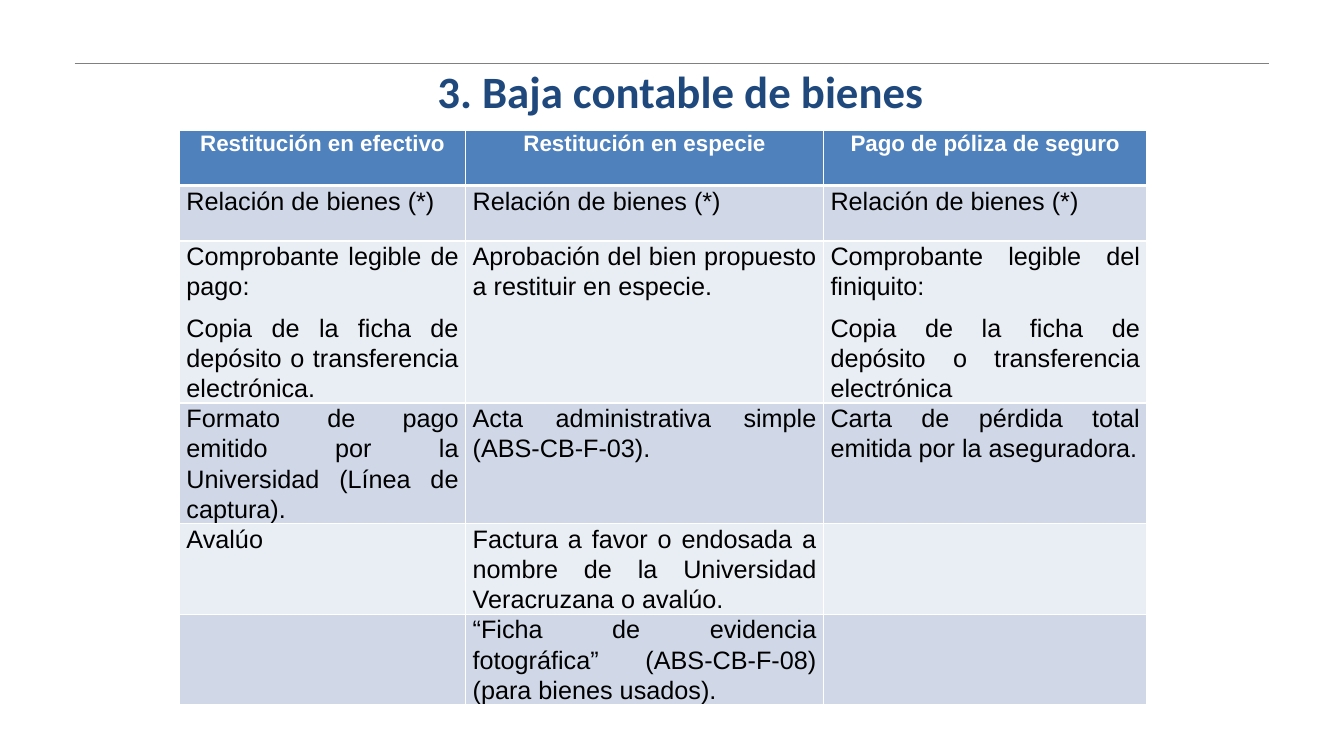
from lxml.etree import SubElement
from pptx import Presentation
from pptx.dml.color import RGBColor as Rgb
from pptx.enum.shapes import MSO_CONNECTOR as Connector
from pptx.enum.text import MSO_ANCHOR as Anchor, PP_ALIGN as Align
from pptx.oxml import parse_xml
from pptx.oxml.ns import nsdecls, qn
from pptx.util import Inches, Pt

COLORS = {
    "white": "FFFFFF", "black": "000000", "rule": "808080", "title": "1F497D",
    "header": "4F81BD", "band": "D0D8E8", "light": "E9EDF4",
}
TITLE_FONT = {"name": "Calibri", "size": Pt(32), "bold": True}
HEADER_FONT = {"name": "Arial", "size": Pt(16), "bold": True}
BODY_FONT = {"name": "Arial", "size": Pt(18), "bold": False}
CELL_MARGINS = {"margin_left": Inches(0.07), "margin_right": Inches(0.07),
                "margin_top": 0, "margin_bottom": 0}
CELL_SPACING = {"line_spacing": 1.07, "space_after": Pt(8)}

COLUMN_WIDTHS = [8.52, 10.65, 9.63]
ROW_HEIGHTS = [2.2, 2.2, 6.2, 4.04, 3.48, 3.48]
REQUIREMENTS = [
    ["Restitución en efectivo", "Restitución en especie", "Pago de póliza de seguro"],
    ["Relación de bienes (*)"] * 3,
    ["Comprobante legible de pago:\nCopia de la ficha de depósito o transferencia electrónica.",
     "Aprobación del bien propuesto a restituir en especie.",
     "Comprobante legible del finiquito:\nCopia de la ficha de depósito o transferencia electrónica"],
    ["Formato de pago emitido por la Universidad (Línea de captura).",
     "Acta administrativa simple (ABS-CB-F-03).",
     "Carta de pérdida total emitida por la aseguradora."],
    ["Avalúo",
     "Factura a favor o endosada a nombre de la Universidad Veracruzana o avalúo.", ""],
    ["", "“Ficha de evidencia fotográfica” (ABS-CB-F-08) (para bienes usados).", ""],
]


def apply(target, values):
    for name, value in values.items():
        setattr(target, name, value)


class SlideBuilder:
    """Draws styled elements on a slide grid of 40 columns and 30 rows."""

    def __init__(self, deck):
        self.page = deck.slides.add_slide(deck.slide_layouts[5])
        self.column = deck.slide_width / 40
        self.row = deck.slide_height / 30

    def x(self, columns):
        return round(columns * self.column)

    def y(self, rows):
        return round(rows * self.row)

    def add_text(self, para, text, font, color, **spacing):
        span = para.add_run()
        span.text = text
        apply(span.font, font)
        span.font.color.rgb = Rgb.from_string(COLORS[color])
        apply(para, spacing)

    def title(self, text, left, top, width, height):
        box = self.page.shapes.title
        apply(box, {"left": self.x(left), "top": self.y(top),
                    "width": self.x(width), "height": self.y(height)})
        apply(box.text_frame, {"vertical_anchor": Anchor.MIDDLE, "word_wrap": True})
        self.add_text(box.text_frame.paragraphs[0], text, TITLE_FONT, "title",
                      alignment=Align.CENTER)

    def rule(self, left, right, top):
        line = self.page.shapes.add_connector(
            Connector.STRAIGHT, self.x(left), self.y(top), self.x(right), self.y(top))
        line.line.color.rgb = Rgb.from_string(COLORS["rule"])
        line.line.width = Pt(0.75)
        SubElement(line._element.spPr, qn("a:effectLst"))

    def borders(self, cell, top, bottom):
        properties = cell._tc.get_or_add_tcPr()
        sides = {"L": 1, "R": 1, "T": top, "B": bottom}
        for index, (side, width) in enumerate(sides.items()):
            properties.insert(index, parse_xml(
                f'<a:ln{side} {nsdecls("a")} w="{Pt(width)}"><a:solidFill>'
                f'<a:srgbClr val="{COLORS["white"]}"/></a:solidFill></a:ln{side}>'))

    def cell(self, cell, text, row_index):
        header = row_index == 0
        fill = "header" if header else "band" if row_index % 2 else "light"
        font, color, align = ((HEADER_FONT, "white", Align.CENTER) if header
                              else (BODY_FONT, "black", Align.JUSTIFY))
        apply(cell, CELL_MARGINS)
        cell.fill.solid()
        cell.fill.fore_color.rgb = Rgb.from_string(COLORS[fill])
        self.borders(cell, 3 if row_index == 1 else 1, 3 if header else 1)
        for index, line in enumerate(text.splitlines()):
            frame = cell.text_frame
            para = frame.add_paragraph() if index else frame.paragraphs[0]
            self.add_text(para, line, font, color, alignment=align, **CELL_SPACING)

    def table(self, left, top, widths, heights, rows):
        table = self.page.shapes.add_table(
            len(heights), len(widths), self.x(left), self.y(top),
            self.x(sum(widths)), self.y(sum(heights))).table
        for column, width in zip(table.columns, widths):
            column.width = self.x(width)
        for row_index, (row, height) in enumerate(zip(table.rows, heights)):
            row.height = self.y(height)
            for cell, text in zip(row.cells, rows[row_index]):
                self.cell(cell, text, row_index)


def main():
    deck = Presentation()
    deck.slide_width, deck.slide_height = Inches(13.33), Inches(7.5)
    builder = SlideBuilder(deck)
    builder.rule(2.22, 37.78, 2.52)
    builder.title("3. Baja contable de bienes", 2.22, 1.44, 36.07, 4.32)
    builder.table(5.34, 5.16, COLUMN_WIDTHS, ROW_HEIGHTS, REQUIREMENTS)
    deck.save("out.pptx")


if __name__ == "__main__":
    main()
